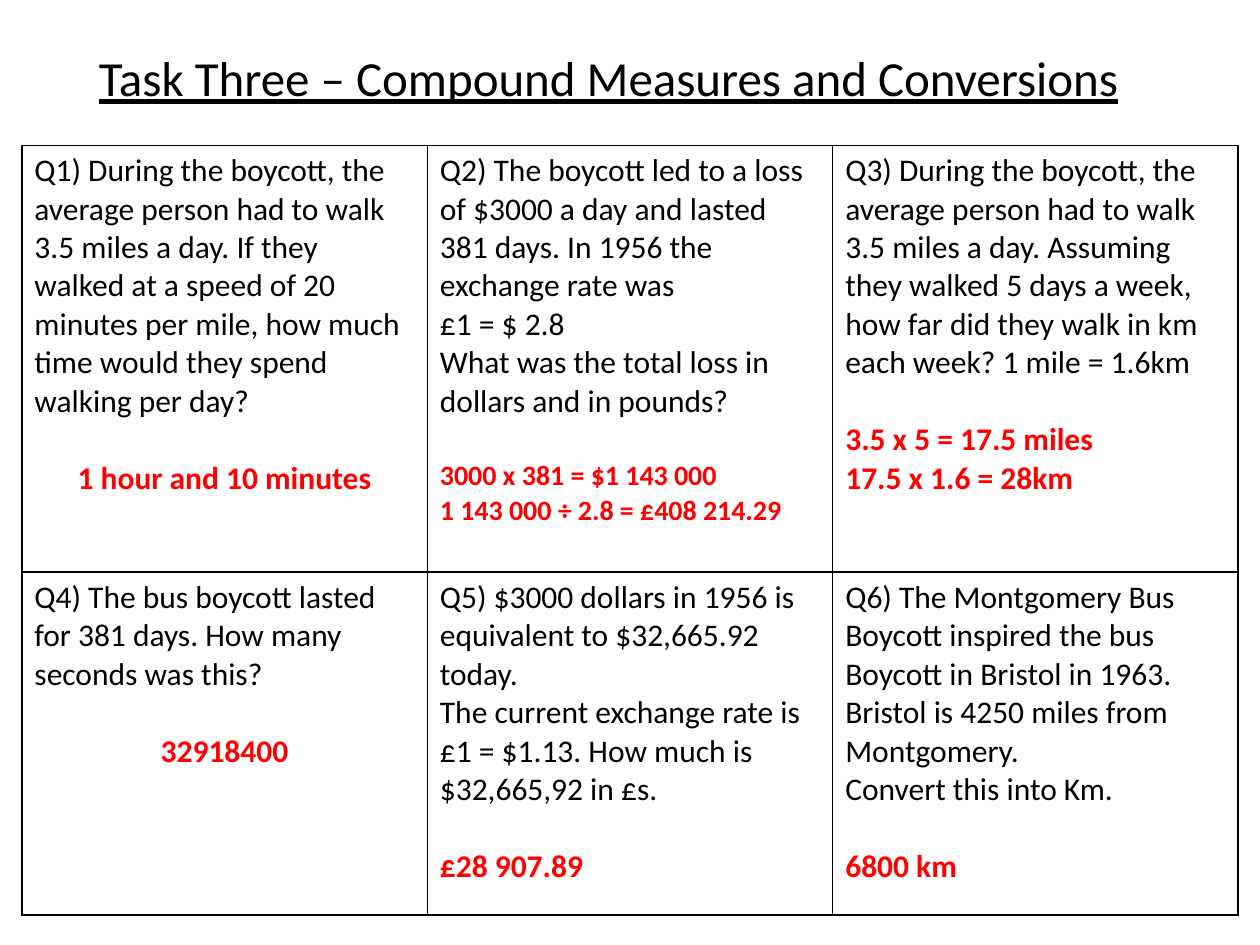
from dataclasses import dataclass

from lxml import etree
from pptx import Presentation
from pptx.dml.color import RGBColor
from pptx.enum import text
from pptx.oxml import ns
from pptx.util import Pt


@dataclass(frozen=True)
class Theme:
    font: str = "Calibri"
    ink: str = "000000"
    answer: str = "FF0000"
    title_size: int = 28
    body_size: int = 18
    small_size: int = 16
    answer_gap: int = 22


THEME = Theme()


def write(paragraph, content, size=THEME.body_size, color=THEME.ink, bold=False,
          underline=False, align=text.PP_ALIGN.LEFT, before=0, spacing=1.0):
    paragraph.alignment = align
    paragraph.space_before = Pt(before)
    paragraph.line_spacing = spacing
    run = paragraph.add_run()
    run.text = content
    run.font.name = THEME.font
    run.font.size = Pt(size)
    run.font.bold = bold
    run.font.underline = underline
    run.font.color.rgb = RGBColor.from_string(color)


def add_borders(cell, color, width):
    properties = cell._tc.get_or_add_tcPr()
    for side in ("lnL", "lnR", "lnT", "lnB"):
        line = etree.SubElement(properties, ns.qn(f"a:{side}"), w=str(Pt(width)))
        fill = etree.SubElement(line, ns.qn("a:solidFill"))
        etree.SubElement(fill, ns.qn("a:srgbClr"), val=color)


# Each question: its paragraphs, its answer lines, and the answer's format
CENTERED = {"align": text.PP_ALIGN.CENTER}
SMALL = {"size": THEME.small_size}
QUESTIONS = [
    (["Q1) During the boycott, the average person had to walk 3.5 miles a day. "
      "If they walked at a speed of 20 minutes per mile, how much time would "
      "they spend walking per day?"],
     ["1 hour and 10 minutes"], CENTERED),
    (["Q2) The boycott led to a loss of $3000 a day and lasted 381 days. "
      "In 1956 the exchange rate was",
      "£1 = $ 2.8",
      "What was the total loss in dollars and in pounds?"],
     ["3000 x 381 = $1 143 000", "1 143 000 ÷ 2.8 = £408 214.29"], SMALL),
    (["Q3) During the boycott, the average person had to walk 3.5 miles a day. "
      "Assuming they walked 5 days a week, how far did they walk in km each "
      "week? 1 mile = 1.6km"],
     ["3.5 x 5 = 17.5 miles", "17.5 x 1.6 = 28km"], {}),
    (["Q4) The bus boycott lasted for 381 days. How many seconds was this?"],
     ["32918400"], CENTERED),
    (["Q5) $3000 dollars in 1956 is equivalent to $32,665.92 today.",
      "The current exchange rate is £1 = $1.13. How much is $32,665,92 in £s."],
     ["£28 907.89"], {}),
    (["Q6) The Montgomery Bus Boycott inspired the bus Boycott in Bristol in 1963.",
      "Bristol is 4250 miles from Montgomery.",
      "Convert this into Km."],
     ["6800 km"], {}),
]

presentation = Presentation()
presentation.slide_width = Pt(720)
presentation.slide_height = Pt(540)
slide = presentation.slides.add_slide(presentation.slide_layouts[6])

# Title
title = slide.shapes.add_textbox(Pt(49.5), Pt(28.8), Pt(621), Pt(34.5)).text_frame
title.word_wrap = True
title.vertical_anchor = text.MSO_ANCHOR.MIDDLE
write(title.paragraphs[0], "Task Three – Compound Measures and Conversions",
      size=THEME.title_size, underline=True, spacing=0.9)

# Question grid
COLUMNS = 3
COLUMN_WIDTH = 231.7
ROW_HEIGHTS = (244, 196)
table = slide.shapes.add_table(
    len(ROW_HEIGHTS), COLUMNS, Pt(12.5), Pt(83),
    Pt(COLUMNS * COLUMN_WIDTH), Pt(sum(ROW_HEIGHTS))).table
table.first_row = table.horz_banding = False
for column in table.columns:
    column.width = Pt(COLUMN_WIDTH)
for row, height in zip(table.rows, ROW_HEIGHTS):
    row.height = Pt(height)

for index, (question, answer, answer_format) in enumerate(QUESTIONS):
    cell = table.cell(*divmod(index, COLUMNS))
    add_borders(cell, THEME.ink, 1)
    cell.fill.background()
    frame = cell.text_frame
    for number, line in enumerate(question):
        write(frame.add_paragraph() if number else frame.paragraphs[0], line)
    for number, line in enumerate(answer):
        write(frame.add_paragraph(), line, color=THEME.answer, bold=True,
              before=0 if number else THEME.answer_gap, **answer_format)

presentation.save("out.pptx")
